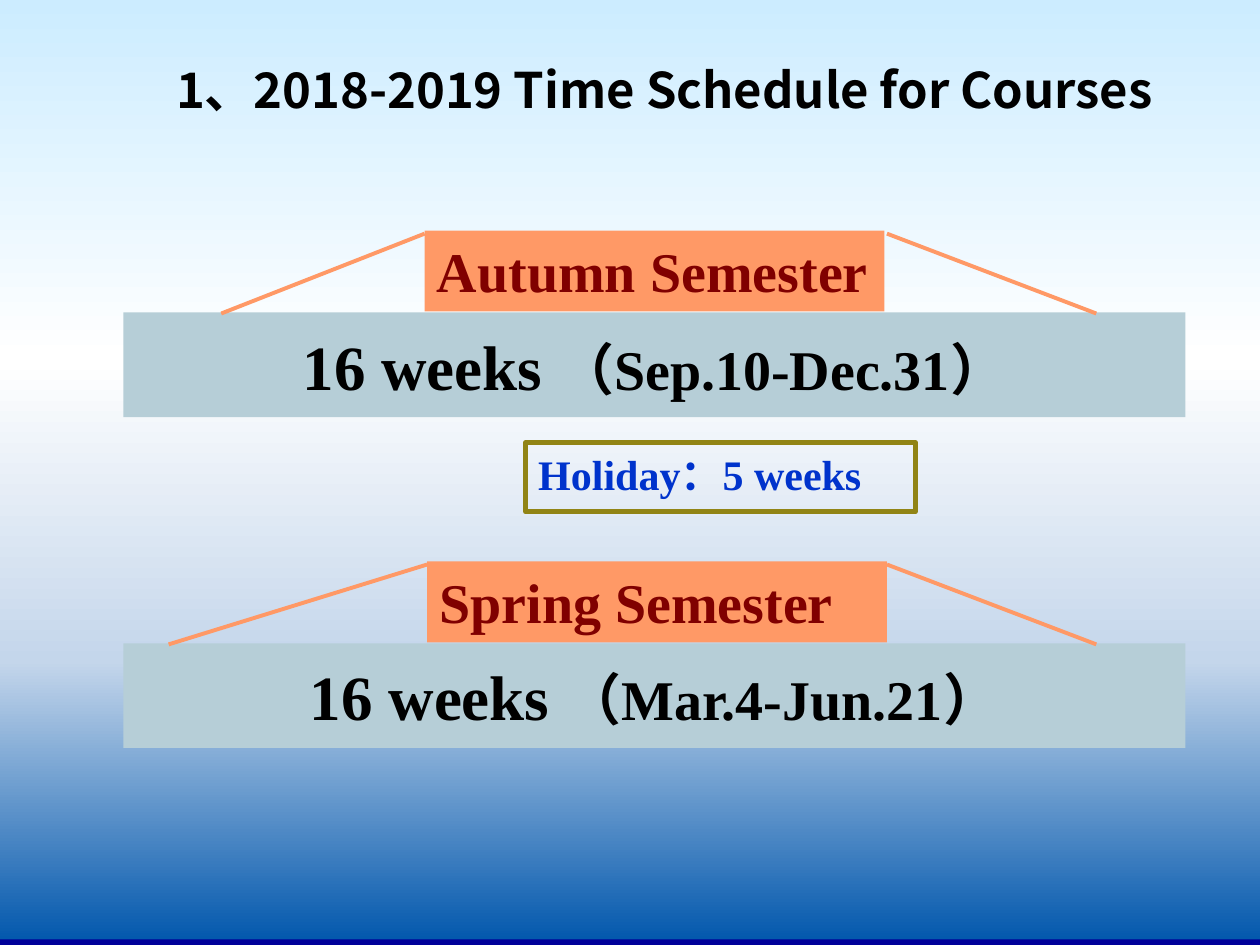
from lxml import etree
from pptx import Presentation
from pptx.dml.color import RGBColor
from pptx.enum.shapes import MSO_CONNECTOR, MSO_SHAPE
from pptx.enum.text import MSO_ANCHOR, PP_ALIGN
from pptx.oxml.ns import qn
from pptx.util import Cm, Pt

RECTANGLE = MSO_SHAPE.RECTANGLE
STRAIGHT = MSO_CONNECTOR.STRAIGHT
TOP, MIDDLE = MSO_ANCHOR.TOP, MSO_ANCHOR.MIDDLE
LEFT, CENTER = PP_ALIGN.LEFT, PP_ALIGN.CENTER

COLORS = {
    "bar": "B6CED7", "label": "FF9966", "label_text": "800000",
    "text": "000000", "holiday": "0033CC", "frame": "918415",
    "footer": "000099",
}
SKY = [(0, "CCECFF"), (38, "FFFFFF"), (70, "C4D6EB"), (100, "0056AC")]
SERIF, SANS = "Times New Roman", "Noto Sans CJK SC"


def color(name):
    return RGBColor.from_string(COLORS[name])


def paint_background(page):
    """Fill the page with the vertical sky gradient."""
    fill = page.background.fill
    fill.gradient()
    fill.gradient_angle = 270
    stops = page.background._cSld.find(".//" + qn("a:gsLst"))
    for stop in list(stops):
        stops.remove(stop)
    for position, value in SKY:
        stop = etree.SubElement(stops, qn("a:gs"), pos=str(position * 1000))
        etree.SubElement(stop, qn("a:srgbClr"), val=value)


def write(box, spans, ink, font=SERIF, align=LEFT, anchor=TOP, wrap=True):
    """Write one bold paragraph from (text, size) spans."""
    frame = box.text_frame
    frame.word_wrap = wrap
    frame.vertical_anchor = anchor
    para = frame.paragraphs[0]
    para.alignment = align
    for text, size in spans:
        span = para.add_run()
        span.text = text
        span.font.name = font
        span.font.size = Pt(size)
        span.font.bold = True
        span.font.color.rgb = color(ink)
        properties = span.font._element
        etree.SubElement(properties, qn("a:ea"), typeface=SANS)
    return para


def add_block(page, left, top, width, height, fill=None, frame=None):
    block = page.shapes.add_shape(
        RECTANGLE, Cm(left), Cm(top), Cm(width), Cm(height))
    block.shadow.inherit = False
    if fill:
        block.fill.solid()
        block.fill.fore_color.rgb = color(fill)
    else:
        block.fill.background()
    if frame:
        block.line.color.rgb = color(frame)
        block.line.width = Pt(3)
    else:
        block.line.fill.background()
    return block


def add_line(page, start, end):
    line = page.shapes.add_connector(
        STRAIGHT, *(Cm(value) for value in (*start, *end)))
    line.line.color.rgb = color("label")
    line.line.width = Pt(2.25)
    etree.SubElement(line._element.spPr, qn("a:effectLst"))


def add_semester(page, top, name, dates, label_left, slope_left):
    """Add a label, the bar below it and the two slopes joining them."""
    bar = add_block(page, 2.49, top + 1.65, 21.41, 2.11, "bar")
    write(bar, [("16 weeks ", 36), (dates, 32)], "text",
          align=CENTER, anchor=MIDDLE, wrap=False)
    label = add_block(page, label_left, top, 9.27, 1.63, "label")
    write(label, [(name, 32)], "label_text")
    upper, lower = top + 0.06, top + 1.67
    add_line(page, (label_left, upper), (slope_left, lower))
    add_line(page, (17.88, upper), (22.1, lower))


def add_title(page, text):
    title = page.shapes.add_textbox(Cm(3.3), Cm(1.27), Cm(20.6), Cm(1.52))
    para = write(title, [(text, 28)], "text", font=SANS)
    para.line_spacing = 0.83


def main():
    deck = Presentation()
    deck.slide_width, deck.slide_height = Cm(25.4), Cm(19.05)
    page = deck.slides.add_slide(deck.slide_layouts[6])
    paint_background(page)
    add_block(page, 0, 18.94, 25.4, 0.11, "footer")
    add_title(page, "1、2018-2019 Time Schedule for Courses")
    add_semester(page, 4.65, "Autumn Semester", "（Sep.10-Dec.31）", 8.56, 4.46)
    holiday = add_block(page, 10.6, 8.92, 7.85, 1.4, frame="frame")
    write(holiday, [("Holiday：5 weeks", 24)], "holiday")
    add_semester(page, 11.32, "Spring Semester", "（Mar.4-Jun.21）", 8.61, 3.4)
    deck.save("out.pptx")


if __name__ == "__main__":
    main()
